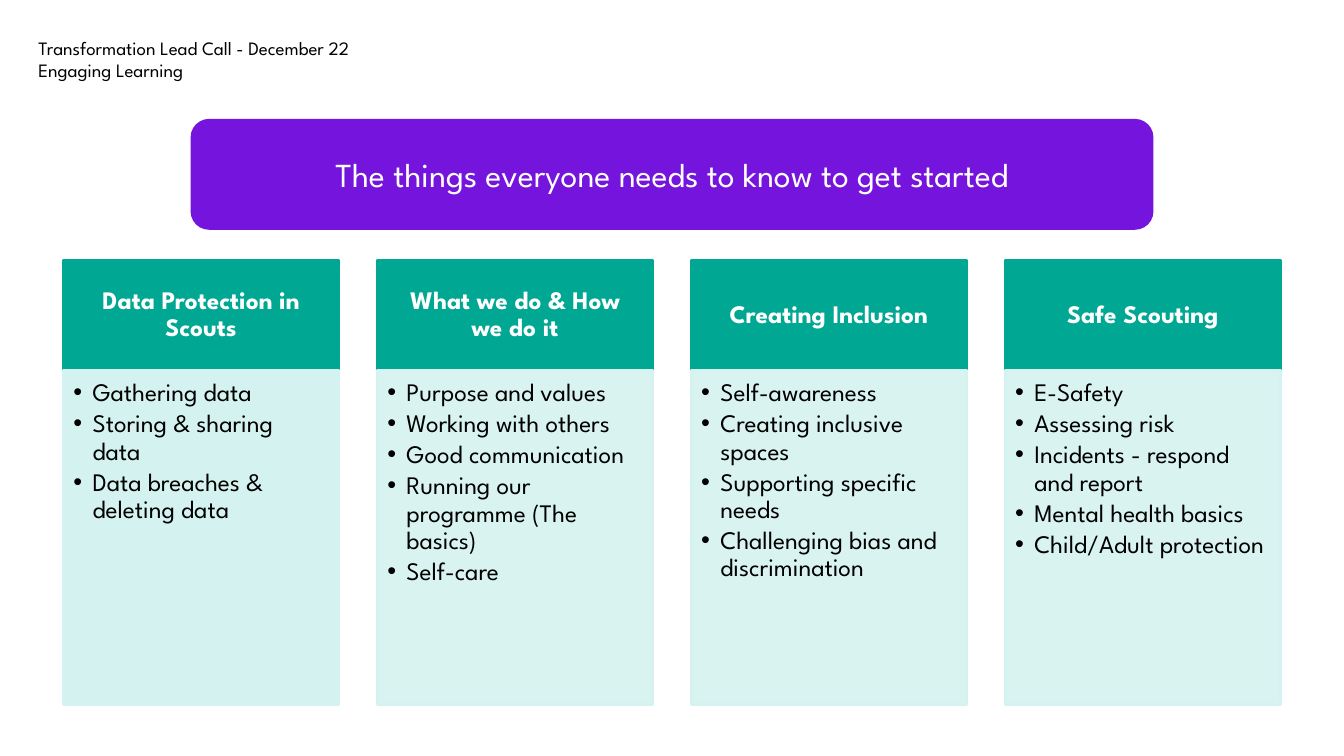
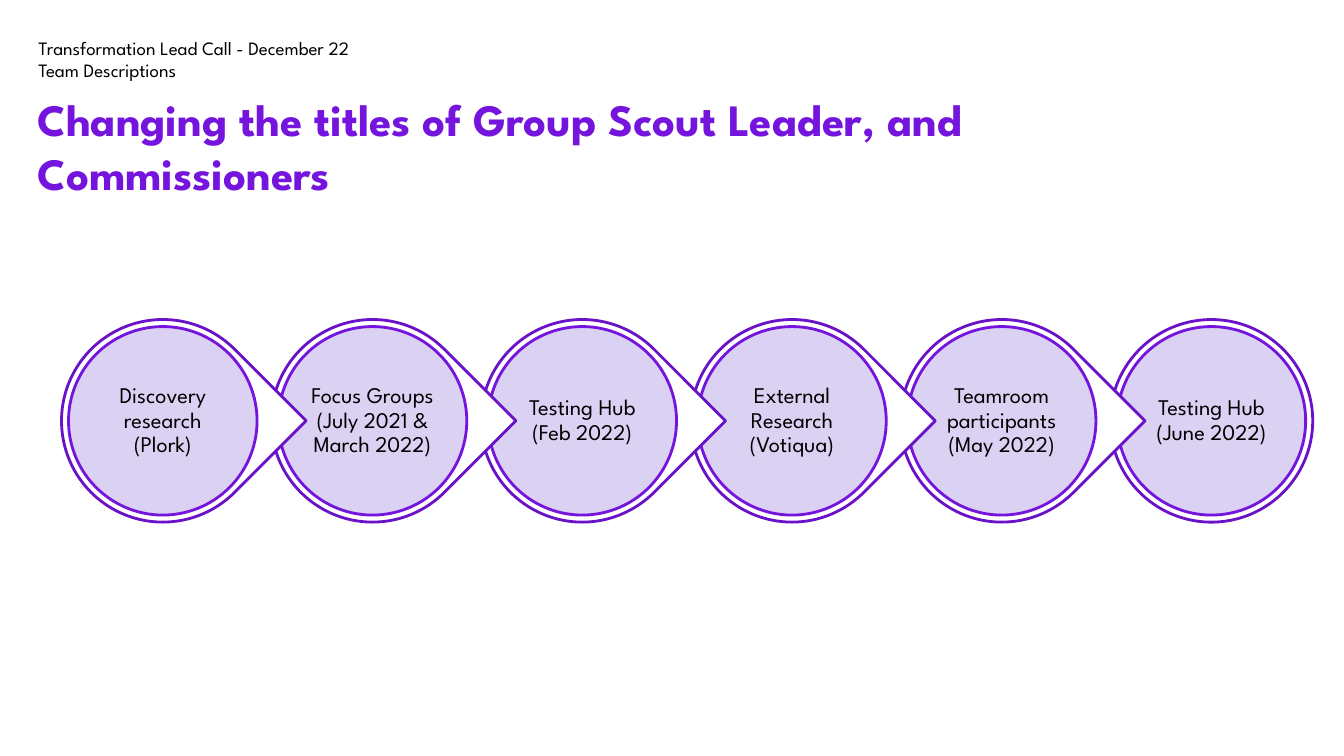
from dataclasses import dataclass
from typing import Any

from lxml.etree import SubElement
from pptx import Presentation
from pptx.dml.color import RGBColor
from pptx.enum.shapes import MSO_SHAPE
from pptx.enum.text import MSO_ANCHOR, MSO_AUTO_SIZE, PP_ALIGN
from pptx.oxml.ns import qn
from pptx.util import Inches, Pt


@dataclass(frozen=True)
class Theme:
    font: str = "League Spartan"
    black: str = "000000"
    white: str = "FFFFFF"
    purple: str = "7414DC"
    outline: str = "6912C8"
    lilac: str = "D6CCF2"
    teal: str = "00A793"
    mint: str = "D4F2EF"
    header_size: float = 13.5
    step_size: float = 16
    column_size: float = 18
    banner_size: float = 24
    heading_size: float = 32
    line_width: float = 2


@dataclass(frozen=True)
class Box:
    left: float
    top: float
    width: float
    height: float

    def inches(self) -> list:
        return [Inches(v) for v in (self.left, self.top, self.width, self.height)]


@dataclass(frozen=True)
class TextStyle:
    size: float
    color: str
    bold: bool = False
    align: Any = PP_ALIGN.LEFT
    anchor: Any = MSO_ANCHOR.TOP
    spacing: float = 1.0
    insets: tuple = (0, 0, 0, 0)
    bullets: bool = False


@dataclass(frozen=True)
class Column:
    title: str
    items: tuple
    alpha: int = 90


THEME = Theme()
CENTRED = {"align": PP_ALIGN.CENTER, "anchor": MSO_ANCHOR.MIDDLE}

HEADER = TextStyle(THEME.header_size, THEME.black, anchor=MSO_ANCHOR.BOTTOM)
SUBHEADER = TextStyle(THEME.header_size, THEME.black)
HEADING = TextStyle(THEME.heading_size, THEME.purple, bold=True)
BANNER = TextStyle(THEME.banner_size, THEME.white, insets=(0.1, 0.05, 0.1, 0.05), **CENTRED)
COLUMN_HEAD = TextStyle(THEME.column_size, THEME.white, bold=True, spacing=0.9,
                        insets=(0.14, 0.08, 0.14, 0.08), **CENTRED)
COLUMN_BODY = TextStyle(THEME.column_size, THEME.black, spacing=0.9,
                        insets=(0.1, 0.1, 0.14, 0.16), bullets=True)
STEP = TextStyle(THEME.step_size, THEME.black, spacing=0.9,
                 insets=(0.02, 0.02, 0.02, 0.02), **CENTRED)

COLUMNS = (
    Column("Data Protection in Scouts",
           ("Gathering data", "Storing & sharing data", "Data breaches & deleting data"), 100),
    Column("What we do & How we do it",
           ("Purpose and values", "Working with others", "Good communication",
            "Running our programme (The basics)", "Self-care")),
    Column("Creating Inclusion",
           ("Self-awareness", "Creating inclusive spaces", "Supporting specific needs",
            "Challenging bias and discrimination")),
    Column("Safe Scouting",
           ("E-Safety", "Assessing risk", "Incidents - respond and report",
            "Mental health basics", "Child/Adult protection")),
)
STEPS = (
    "Discovery research (Plork)",
    "Focus Groups (July 2021 & March 2022)",
    "Testing Hub (Feb 2022)",
    "External Research (Votiqua)",
    "Teamroom participants (May 2022)",
    "Testing Hub (June 2022)",
)


def apply(obj: Any, values: dict) -> None:
    for name, value in values.items():
        setattr(obj, name, value)


def add_bullet(p: Any, indent: float = 0.19) -> None:
    pPr = p._p.get_or_add_pPr()
    pPr.set("marL", str(Inches(indent)))
    pPr.set("indent", str(-Inches(indent)))
    SubElement(pPr, qn("a:buFont")).set("typeface", "Arial")
    SubElement(pPr, qn("a:buChar")).set("char", "•")


def write(sp: Any, style: TextStyle, *lines: str) -> None:
    tf = sp.text_frame
    left, top, right, bottom = (Inches(v) for v in style.insets)
    apply(tf, {"word_wrap": True, "auto_size": MSO_AUTO_SIZE.NONE,
               "vertical_anchor": style.anchor, "margin_left": left, "margin_top": top,
               "margin_right": right, "margin_bottom": bottom})
    for i, line in enumerate(lines):
        p = tf.add_paragraph() if i else tf.paragraphs[0]
        if style.bullets:
            add_bullet(p)
        apply(p, {"alignment": style.align, "line_spacing": style.spacing,
                  "space_before": Pt(0),
                  "space_after": Pt(0.15 * style.size if style.bullets else 0)})
        r = p.add_run()
        r.text = line
        apply(r.font, {"name": THEME.font, "size": Pt(style.size), "bold": style.bold})
        r.font.color.rgb = RGBColor.from_string(style.color)


def add_text(s: Any, box: Box, style: TextStyle, text: str) -> None:
    write(s.shapes.add_textbox(*box.inches()), style, text)


def add_panel(s: Any, kind: Any, box: Box, fill: str, line: str = "", alpha: int = 100) -> Any:
    sp = s.shapes.add_shape(kind, *box.inches())
    sp.shadow.inherit = False
    sp.fill.solid()
    sp.fill.fore_color.rgb = RGBColor.from_string(fill)
    if alpha < 100:
        color = sp.fill._xPr.find(qn("a:solidFill"))[0]
        SubElement(color, qn("a:alpha")).set("val", str(alpha * 1000))
    if line:
        sp.line.color.rgb = RGBColor.from_string(line)
        sp.line.width = Pt(THEME.line_width)
    else:
        sp.line.fill.background()
    return sp


def add_slide(prs: Any, section: str) -> Any:
    s = prs.slides.add_slide(prs.slide_layouts[5])
    title = s.shapes.title
    names = ("left", "top", "width", "height")
    apply(title, dict(zip(names, Box(0.38, 0.36, 6.29, 0.23).inches())))
    write(title, HEADER, "Transformation Lead Call - December 22")
    add_text(s, Box(0.38, 0.58, 6.29, 0.23), SUBHEADER, section)
    return s


def add_columns(s: Any, columns: tuple) -> None:
    first, last, width = 0.63, 9.97, 2.73
    step = (last - first) / (len(columns) - 1)
    for i, column in enumerate(columns):
        left = first + i * step
        head = add_panel(s, MSO_SHAPE.RECTANGLE, Box(left, 2.58, width, 1.09),
                         THEME.teal, THEME.teal)
        write(head, COLUMN_HEAD, column.title)
        body = add_panel(s, MSO_SHAPE.RECTANGLE, Box(left, 3.67, width, 3.32),
                         THEME.mint, THEME.mint, column.alpha)
        write(body, COLUMN_BODY, *column.items)


def add_steps(s: Any, steps: tuple) -> None:
    first, top, step, size, rim = 0.61, 3.17, 2.08, 2.01, 0.07
    last = len(steps) - 1
    for i, text in reversed(list(enumerate(steps))):
        left = first + i * step
        kind = MSO_SHAPE.OVAL if i == last else MSO_SHAPE.TEAR
        outer = add_panel(s, kind, Box(left, top, size, size), THEME.white, THEME.outline)
        outer.rotation = 0 if i == last else 45
        inner = size - 2 * rim
        disc = add_panel(s, MSO_SHAPE.OVAL, Box(left + rim, top + rim, inner, inner),
                         THEME.lilac, THEME.purple, 90)
        write(disc, STEP, text)


def build_learning(prs: Any) -> None:
    s = add_slide(prs, "Engaging Learning")
    add_columns(s, COLUMNS)
    banner = add_panel(s, MSO_SHAPE.ROUNDED_RECTANGLE, Box(1.89, 1.18, 9.55, 1.1), THEME.purple)
    write(banner, BANNER, "The things everyone needs to know to get started")


def build_titles(prs: Any) -> None:
    s = add_slide(prs, "Team Descriptions")
    add_text(s, Box(0.37, 0.91, 9.49, 1.08), HEADING,
             "Changing the titles of Group Scout Leader, and Commissioners")
    add_steps(s, STEPS)


def main() -> None:
    prs = Presentation()
    apply(prs, {"slide_width": Inches(13.33), "slide_height": Inches(7.5)})
    build_learning(prs)
    build_titles(prs)
    prs.save("out.pptx")


if __name__ == "__main__":
    main()
